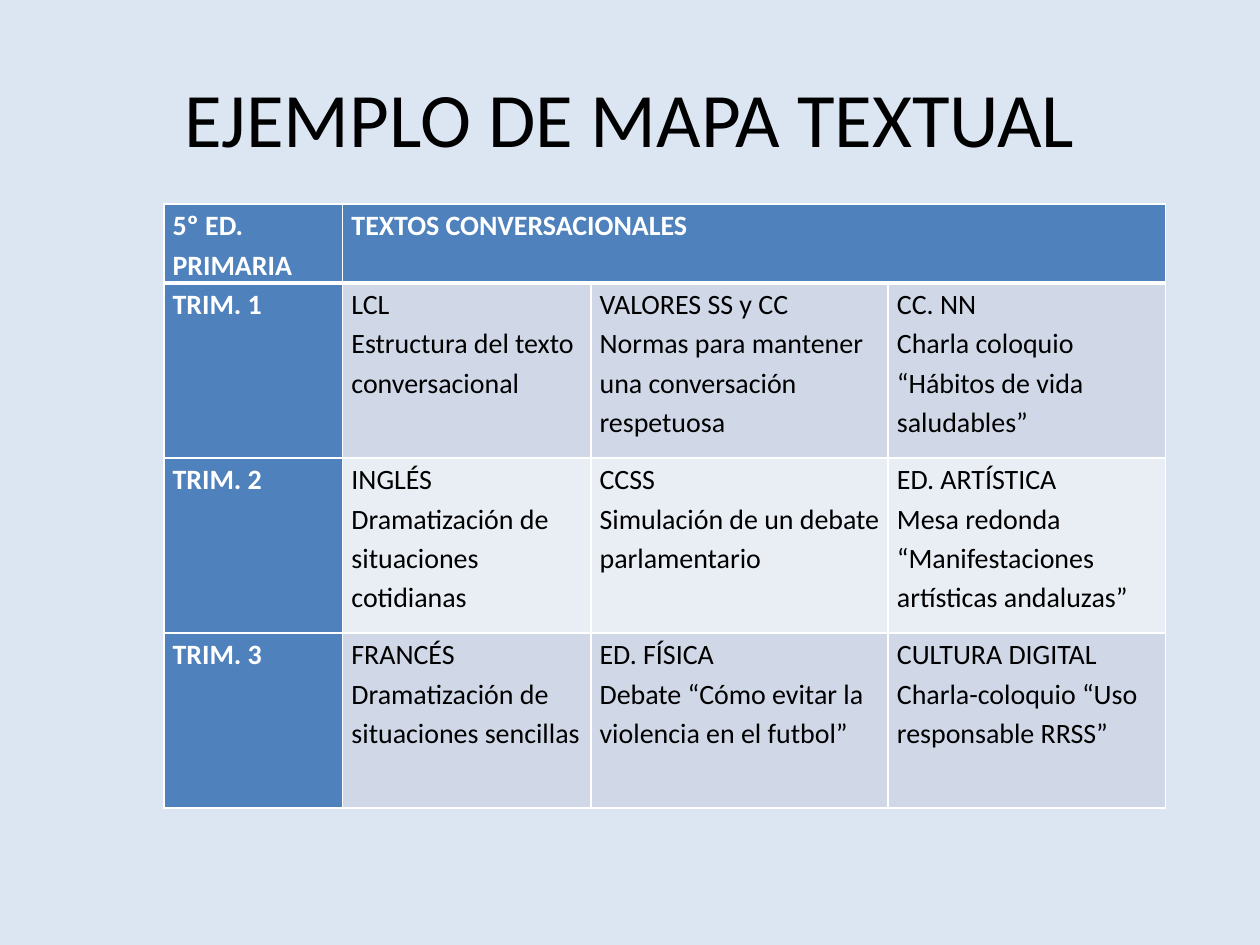
"""Build the slide with the conversational text map for fifth grade."""
from lxml import etree
from pptx import Presentation
from pptx.dml.color import RGBColor
from pptx.enum.text import MSO_ANCHOR, PP_ALIGN
from pptx.oxml.ns import qn
from pptx.util import Inches, Pt


def color(hex_code):
    return RGBColor.from_string(hex_code)


def add_borders(cell, bottom_width):
    properties = cell._tc.get_or_add_tcPr()
    widths = {"a:lnL": 1, "a:lnR": 1, "a:lnT": 1, "a:lnB": bottom_width}
    for position, (side, width) in enumerate(widths.items()):
        line = etree.Element(qn(side), w=str(Pt(width)))
        fill = etree.SubElement(line, qn("a:solidFill"))
        etree.SubElement(fill, qn("a:srgbClr"), val="FFFFFF")
        properties.insert(position, line)


prs = Presentation()
prs.slide_width, prs.slide_height = Inches(10), Inches(7.5)
slide = prs.slides.add_slide(prs.slide_layouts[5])
slide.background.fill.solid()
slide.background.fill.fore_color.rgb = color("DCE6F2")

title = slide.shapes.title
title.left, title.top = Inches(0.5), Inches(0.3)
title.width, title.height = Inches(9), Inches(1.25)
title.text_frame.text = "EJEMPLO DE MAPA TEXTUAL"
title.text_frame.vertical_anchor = MSO_ANCHOR.MIDDLE
heading = title.text_frame.paragraphs[0]
heading.alignment = PP_ALIGN.CENTER
heading.runs[0].font.size = Pt(44)
heading.runs[0].font.name = "Calibri"
heading.runs[0].font.color.rgb = color("000000")

text_map = [
    ["5º ED. PRIMARIA", "TEXTOS CONVERSACIONALES", "", ""],
    ["TRIM. 1",
     "LCL\nEstructura del texto conversacional",
     "VALORES SS y CC\nNormas para mantener una conversación respetuosa",
     "CC. NN\nCharla coloquio “Hábitos de vida saludables”"],
    ["TRIM. 2",
     "INGLÉS\nDramatización de situaciones cotidianas",
     "CCSS\nSimulación de un debate parlamentario",
     "ED. ARTÍSTICA\nMesa redonda “Manifestaciones artísticas andaluzas”"],
    ["TRIM. 3",
     "FRANCÉS\nDramatización de situaciones sencillas",
     "ED. FÍSICA\nDebate “Cómo evitar la violencia en el futbol”",
     "CULTURA DIGITAL\nCharla-coloquio “Uso responsable RRSS”"],
]
column_widths = [1.42, 1.97, 2.36, 2.2]
row_heights = [0.62, 1.39, 1.39, 1.39]

table = slide.shapes.add_table(
    len(row_heights), len(column_widths), Inches(1.3), Inches(1.62),
    Inches(sum(column_widths)), Inches(sum(row_heights))).table
for column, width in zip(table.columns, column_widths):
    column.width = Inches(width)
for row, height in zip(table.rows, row_heights):
    row.height = Inches(height)
table.cell(0, 1).merge(table.cell(0, 3))

for r, row_texts in enumerate(text_map):
    for c, text in enumerate(row_texts):
        cell = table.cell(r, c)
        is_header = r == 0 or c == 0
        band = "D0D8E8" if r % 2 else "E9EDF4"
        cell.fill.solid()
        cell.fill.fore_color.rgb = color("4F81BD" if is_header else band)
        add_borders(cell, 3 if r == 0 else 1)
        cell.margin_left = cell.margin_right = Inches(0.07)
        cell.margin_top = cell.margin_bottom = 0
        if not text:
            continue
        cell.text_frame.text = text
        for paragraph in cell.text_frame.paragraphs:
            paragraph.line_spacing = 1.15
            font = paragraph.runs[0].font
            font.name, font.size, font.bold = "Calibri", Pt(16), is_header
            font.color.rgb = color("FFFFFF" if is_header else "000000")

prs.save("out.pptx")
